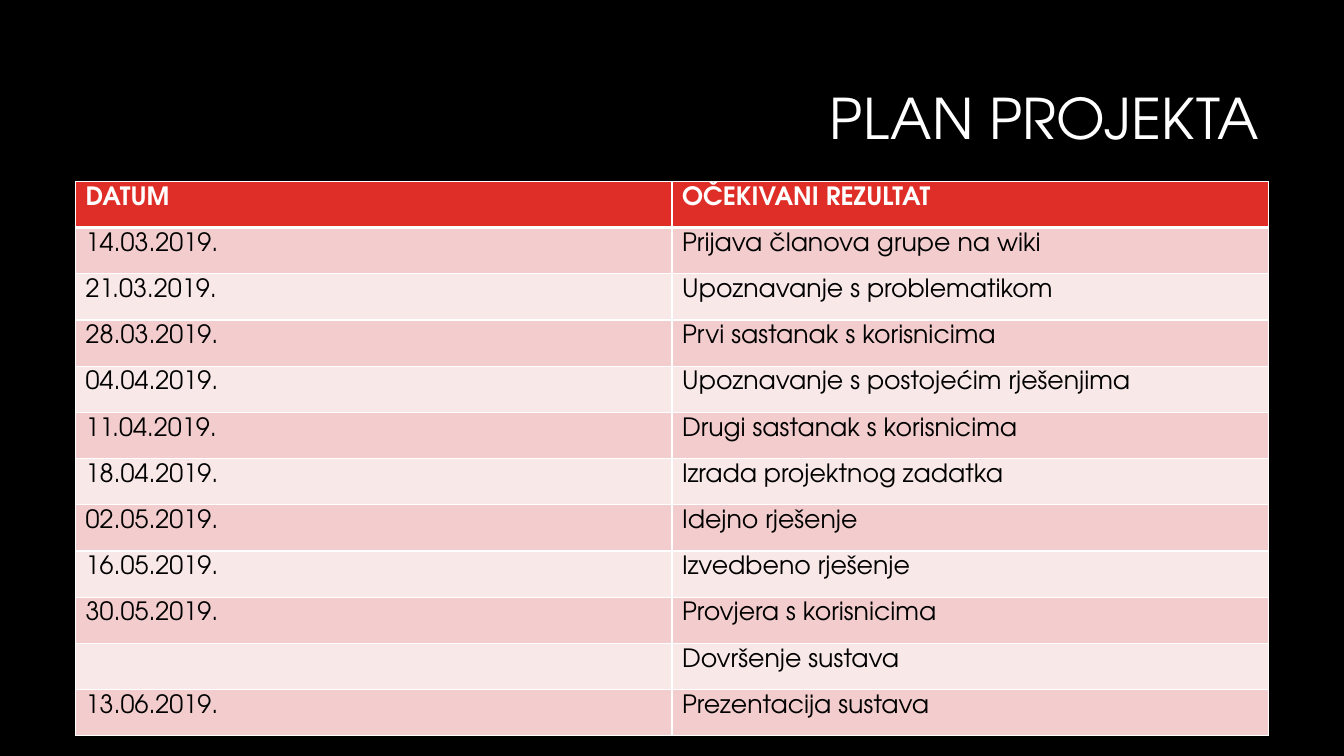
from lxml import etree
from pptx import Presentation
from pptx.dml.color import RGBColor
from pptx.enum.text import MSO_ANCHOR, PP_ALIGN
from pptx.oxml.ns import qn
from pptx.util import Inches, Pt

TITLE = "PLAN PROJEKTA"
HEADER = ("DATUM", "OČEKIVANI REZULTAT")
PLAN = [
    ("14.03.2019.", "Prijava članova grupe na wiki"),
    ("21.03.2019.", "Upoznavanje s problematikom"),
    ("28.03.2019.", "Prvi sastanak s korisnicima"),
    ("04.04.2019.", "Upoznavanje s postojećim rješenjima"),
    ("11.04.2019.", "Drugi sastanak s korisnicima"),
    ("18.04.2019.", "Izrada projektnog zadatka"),
    ("02.05.2019.", "Idejno rješenje"),
    ("16.05.2019.", "Izvedbeno rješenje"),
    ("30.05.2019.", "Provjera s korisnicima"),
    ("", "Dovršenje sustava"),
    ("13.06.2019.", "Prezentacija sustava"),
]

FONT = "TeX Gyre Adventor"
BLACK = RGBColor(0x00, 0x00, 0x00)
WHITE = RGBColor(0xFF, 0xFF, 0xFF)
RED = RGBColor(0xDF, 0x2E, 0x28)
PINK = RGBColor(0xF3, 0xCD, 0xCD)
PALE_PINK = RGBColor(0xF9, 0xE8, 0xE8)
MIDDLE, TOP = MSO_ANCHOR.MIDDLE, MSO_ANCHOR.TOP
RIGHT = PP_ALIGN.RIGHT

TABLE_WIDTH, TABLE_HEIGHT = Inches(11.83), Inches(5.5)
CELL_MARGIN = Inches(0.05)


def style_text(paragraph, size, color, bold=False):
    font = paragraph.font
    font.name, font.size, font.bold = FONT, Pt(size), bold
    font.color.rgb = color


def add_borders(cell, widths):
    """Draw white borders; widths maps each side tag to points."""
    properties = cell._tc.get_or_add_tcPr()
    for position, (side, width) in enumerate(widths.items()):
        line = etree.Element(qn(f"a:{side}"), w=str(Pt(width)))
        fill = etree.SubElement(line, qn("a:solidFill"))
        etree.SubElement(fill, qn("a:srgbClr"), val=str(WHITE))
        properties.insert(position, line)


prs = Presentation()
prs.slide_width, prs.slide_height = Inches(13.33), Inches(7.5)
slide = prs.slides.add_slide(prs.slide_layouts[5])
slide.background.fill.solid()
slide.background.fill.fore_color.rgb = BLACK

# Title
title = slide.shapes.title
title.left, title.top = Inches(3.17), Inches(0.62)
title.width, title.height = Inches(9.42), Inches(1.17)
title.text_frame.text = TITLE
title.text_frame.vertical_anchor = MIDDLE
heading = title.text_frame.paragraphs[0]
heading.alignment, heading.line_spacing = RIGHT, 0.9
style_text(heading, 40, WHITE)

# Project plan table
rows = [HEADER] + PLAN
schedule = slide.shapes.add_table(
    len(rows), len(HEADER), Inches(0.75), Inches(1.8), TABLE_WIDTH, TABLE_HEIGHT
).table

for r, entries in enumerate(rows):
    is_header = r == 0
    if is_header:
        fill_color = RED
    else:
        fill_color = PINK if r % 2 else PALE_PINK
    top_width = 3 if r == 1 else 1
    bottom_width = 3 if is_header else 1
    for c, entry in enumerate(entries):
        cell = schedule.cell(r, c)
        cell.text = entry
        cell.vertical_anchor = TOP
        cell.margin_top = cell.margin_bottom = CELL_MARGIN
        cell.fill.solid()
        cell.fill.fore_color.rgb = fill_color
        style_text(cell.text_frame.paragraphs[0], 18,
                   WHITE if is_header else BLACK, is_header)
        add_borders(cell, {"lnL": 1, "lnR": 1, "lnT": top_width, "lnB": bottom_width})

prs.save("out.pptx")
